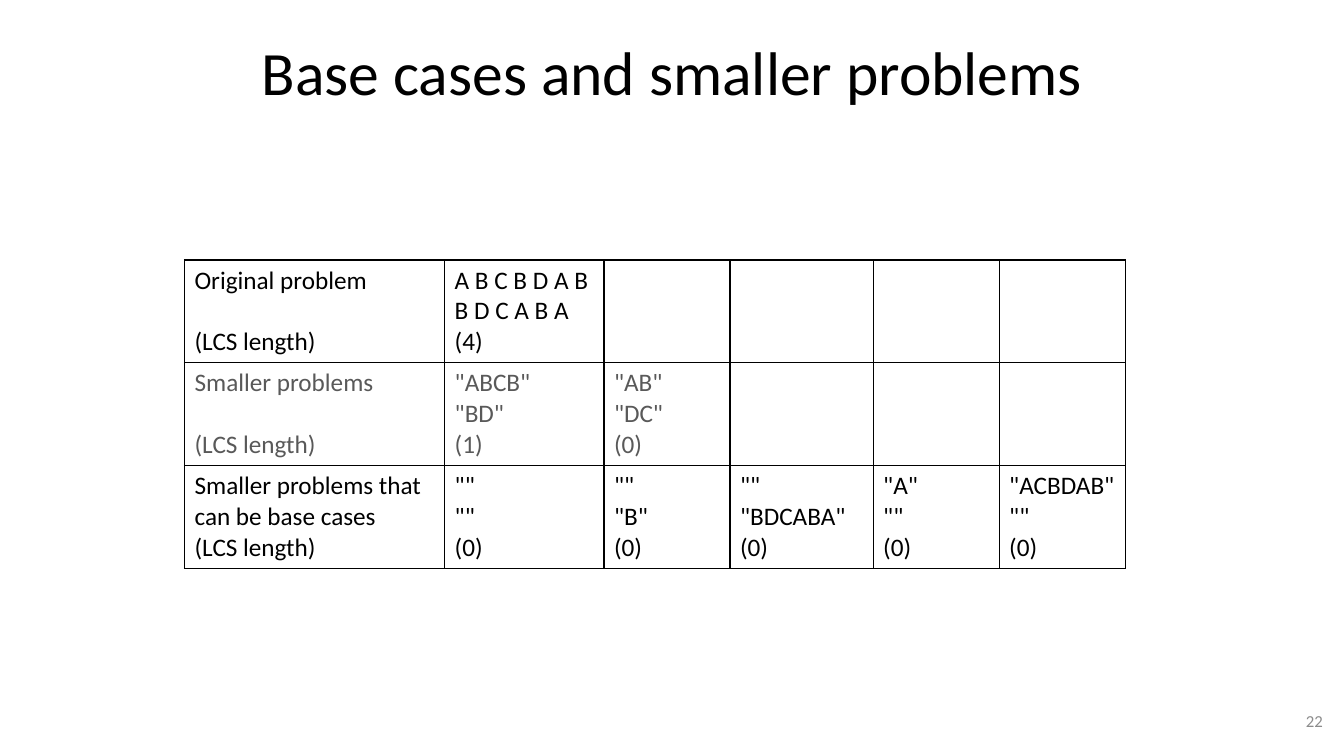
"""Build a slide with a table of base cases and smaller LCS problems."""
from dataclasses import dataclass

from lxml.etree import SubElement
from pptx import Presentation
from pptx.dml.color import RGBColor
from pptx.enum.text import MSO_ANCHOR, PP_ALIGN
from pptx.oxml.ns import qn
from pptx.slide import Slide
from pptx.table import _Cell as Cell
from pptx.text.text import _Paragraph as Paragraph
from pptx.util import Inches, Pt

BLACK = RGBColor(0x00, 0x00, 0x00)
DARK_GRAY = RGBColor(0x59, 0x59, 0x59)
PAGE_GRAY = RGBColor(0x8C, 0x8C, 0x8C)
FONT = "Calibri"
LINE_GAP = 22
COL_WIDTHS = (2.58, 1.58, 1.25, 1.42, 1.25, 1.25)
ROW_HEIGHT = 1.02


@dataclass(frozen=True)
class Label:
    text: str
    left: float
    top: float
    width: float
    height: float
    size: float
    color: RGBColor
    align: PP_ALIGN


@dataclass(frozen=True)
class ProblemRow:
    heading: str
    color: RGBColor
    length_gap: float
    problems: tuple[tuple[str, str, int], ...]


LABELS = (
    Label("Base cases and smaller problems", 0.67, 0.08, 12, 1.25, 44, BLACK, PP_ALIGN.CENTER),
    Label("22", 10.11, 6.95, 3.11, 0.4, 12, PAGE_GRAY, PP_ALIGN.RIGHT),
)

ROWS = (
    ProblemRow("Original problem", BLACK, LINE_GAP, (("A B C B D A B", "B D C A B A", 4),)),
    ProblemRow("Smaller problems", DARK_GRAY, LINE_GAP,
               (('"ABCB"', '"BD"', 1), ('"AB"', '"DC"', 0))),
    ProblemRow("Smaller problems that can be base cases", BLACK, 0,
               (('""', '""', 0), ('""', '"B"', 0), ('""', '"BDCABA"', 0),
                ('"A"', '""', 0), ('"ACBDAB"', '""', 0))),
)


def set_font(p: Paragraph, size: float, color: RGBColor) -> None:
    p.font.name = FONT
    p.font.size = Pt(size)
    p.font.color.rgb = color


def add_label(s: Slide, label: Label) -> None:
    box = (label.left, label.top, label.width, label.height)
    tf = s.shapes.add_textbox(*map(Inches, box)).text_frame
    tf.word_wrap = True
    tf.vertical_anchor = MSO_ANCHOR.MIDDLE
    p = tf.paragraphs[0]
    p.text = label.text
    p.alignment = label.align
    set_font(p, label.size, label.color)


def style_cell(cell: Cell) -> None:
    tc_pr = cell._tc.get_or_add_tcPr()
    for side in ("a:lnL", "a:lnR", "a:lnT", "a:lnB"):
        ln = SubElement(tc_pr, qn(side), w=str(Pt(1)))
        fill = SubElement(ln, qn("a:solidFill"))
        SubElement(fill, qn("a:srgbClr"), val=str(BLACK))
    cell.fill.background()


def fill_cell(cell: Cell, lines: tuple[str, ...], color: RGBColor) -> None:
    tf = cell.text_frame
    tf.text = "\n".join(lines)
    for p in tf.paragraphs:
        set_font(p, 18, color)


def add_problem_table(s: Slide) -> None:
    frame = s.shapes.add_table(
        len(ROWS), len(COL_WIDTHS), Inches(1.83), Inches(2.58),
        Inches(sum(COL_WIDTHS)), Inches(ROW_HEIGHT * len(ROWS)))
    table = frame.table
    table.first_row = table.horz_banding = False
    for column, width in zip(table.columns, COL_WIDTHS):
        column.width = Inches(width)
    for cell in table.iter_cells():
        style_cell(cell)
    for i, row in enumerate(ROWS):
        table.rows[i].height = Inches(ROW_HEIGHT)
        heading = table.cell(i, 0)
        fill_cell(heading, (row.heading, "(LCS length)"), row.color)
        heading.text_frame.paragraphs[1].space_before = Pt(row.length_gap)
        for j, (first, second, length) in enumerate(row.problems, start=1):
            fill_cell(table.cell(i, j), (first, second, f"({length})"), row.color)


def main() -> None:
    prs = Presentation()
    prs.slide_width, prs.slide_height = Inches(13.33), Inches(7.5)
    s = prs.slides.add_slide(prs.slide_layouts[6])
    for label in LABELS:
        add_label(s, label)
    add_problem_table(s)
    prs.save("out.pptx")


if __name__ == "__main__":
    main()
